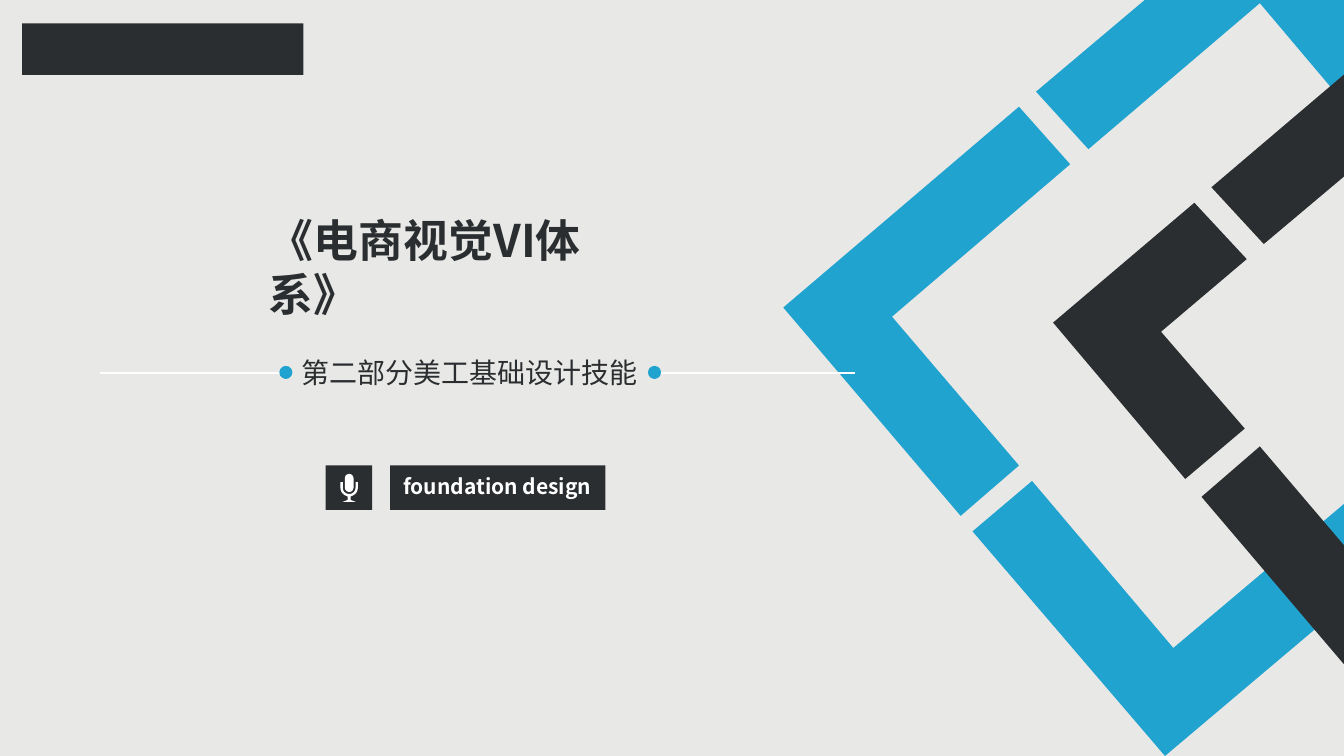
"""Build the cover slide of an e-commerce visual identity course."""
import math
from dataclasses import dataclass

import pptx
import pptx.dml.color
import pptx.enum.shapes
import pptx.enum.text
import pptx.oxml.ns
import pptx.shapes.autoshape
import pptx.slide
import pptx.util
from lxml import etree
from pptx.util import Cm

RGBColor = pptx.dml.color.RGBColor
MSO_SHAPE = pptx.enum.shapes.MSO_SHAPE
PP_ALIGN = pptx.enum.text.PP_ALIGN

PAPER = RGBColor(0xE8, 0xE8, 0xE6)
BLUE = RGBColor(0x21, 0xA3, 0xD0)
DARK = RGBColor(0x2B, 0x2E, 0x30)
WHITE = RGBColor(0xFF, 0xFF, 0xFF)
FONT = "Noto Sans CJK SC"
SLIDE_WIDTH, SLIDE_HEIGHT = 33.87, 19.05

Point = tuple[float, float]


@dataclass(frozen=True)
class Outline:
    contours: list[list[Point]]
    color: RGBColor


@dataclass(frozen=True)
class Block:
    left: float
    top: float
    width: float
    height: float
    color: RGBColor
    kind: MSO_SHAPE = MSO_SHAPE.RECTANGLE


@dataclass(frozen=True)
class Rule:
    start: float
    end: float


@dataclass(frozen=True)
class Caption:
    left: float
    top: float
    width: float
    height: float
    wording: str
    size: int
    color: RGBColor
    bold: bool = False
    align: PP_ALIGN = PP_ALIGN.LEFT


def stand_outline(x: float, y: float) -> list[Point]:
    """Return the microphone stand around the centre of its cradle."""
    outer, inner, arm, stem = 0.22, 0.16, 0.14, 0.04
    turns = [math.radians(angle) for angle in range(0, 181, 15)]
    cradle = [(x + inner * math.cos(t), y + inner * math.sin(t)) for t in turns]
    right = [(x + outer * math.cos(t), y + outer * math.sin(t)) for t in turns[:6]]
    foot = [(x + stem, y + outer), (x + stem, y + 0.31), (x + 0.17, y + 0.36)]
    half = [(x + inner, y - arm), (x + outer, y - arm), *right, *foot]
    mirrored = [(2 * x - px, py) for px, py in reversed(half)]
    return [*half, *mirrored, *reversed(cradle)]


FRAMES = [
    Outline([
        [(26.01, 12.12), (29.57, 16.33), (33.87, 12.7), (33.87, 15.24),
         (29.36, 19.05), (24.51, 13.39)],
        [(25.68, 2.69), (26.97, 4.14), (22.48, 7.98), (25.68, 11.73),
         (24.21, 13), (19.74, 7.75)],
        [(28.85, 0), (33.87, 0), (33.87, 2.59), (33.55, 2.21), (31.75, 0.08),
         (27.43, 3.76), (26.11, 2.31)],
    ], BLUE),
    Outline([
        [(31.75, 11.25), (33.87, 13.74), (33.87, 16.74), (30.28, 12.52)],
        [(30.1, 5.11), (31.42, 6.53), (29.26, 8.36), (31.37, 10.8),
         (29.87, 12.07), (26.54, 8.13)],
        [(33.87, 1.88), (33.87, 4.45), (31.85, 6.15), (30.53, 4.72)],
    ], DARK),
]
RULE_Y = 9.4
RULES = [Rule(7.11, 2.51), Rule(16.66, 21.54)]
BLOCKS = [
    Block(7.04, 9.22, 0.33, 0.33, BLUE, MSO_SHAPE.OVAL),
    Block(16.33, 9.22, 0.33, 0.33, BLUE, MSO_SHAPE.OVAL),
    Block(0.56, 0.59, 7.09, 1.3, DARK),
    Block(8.21, 11.73, 1.17, 1.12, DARK),
    Block(9.83, 11.73, 5.43, 1.12, DARK),
]
MICROPHONE_STAND = Outline([stand_outline(8.8, 12.29)], WHITE)
MICROPHONE_HEAD = Block(8.69, 11.94, 0.22, 0.46, WHITE, MSO_SHAPE.ROUNDED_RECTANGLE)
CAPTIONS = [
    Caption(9.91, 11.81, 5.97, 0.89, "foundation design", 15, WHITE, bold=True),
    Caption(7.34, 8.84, 8.99, 1.12, "第二部分美工基础设计技能", 20, DARK,
            align=PP_ALIGN.CENTER),
    Caption(6.53, 5.23, 10.59, 1.63, "《电商视觉VI体系》", 32, DARK, bold=True),
]


def paint(shape: pptx.shapes.autoshape.Shape, color: RGBColor) -> None:
    """Give a shape a plain fill without line or shadow."""
    shape.shadow.inherit = False
    shape.fill.solid()
    shape.fill.fore_color.rgb = color
    shape.line.fill.background()


def draw_outline(slide: pptx.slide.Slide, outline: Outline) -> None:
    """Draw all contours of an outline as one freeform."""
    first, *others = [[(Cm(x), Cm(y)) for x, y in contour]
                      for contour in outline.contours]
    builder = slide.shapes.build_freeform(*first[0])
    builder.add_line_segments(first[1:])
    for contour in others:
        builder.move_to(*contour[0])
        builder.add_line_segments(contour[1:])
    paint(builder.convert_to_shape(), outline.color)


def draw_block(slide: pptx.slide.Slide, block: Block) -> None:
    """Draw a preset shape."""
    shape = slide.shapes.add_shape(block.kind, Cm(block.left), Cm(block.top),
                                   Cm(block.width), Cm(block.height))
    if block.kind == MSO_SHAPE.ROUNDED_RECTANGLE:
        shape.adjustments[0] = 0.5
    paint(shape, block.color)


def draw_rule(slide: pptx.slide.Slide, rule: Rule) -> None:
    """Draw a white horizontal line beside the subtitle."""
    line = slide.shapes.add_connector(
        pptx.enum.shapes.MSO_CONNECTOR.STRAIGHT,
        Cm(rule.start), Cm(RULE_Y), Cm(rule.end), Cm(RULE_Y))
    line.line.color.rgb = WHITE
    line.line.width = pptx.util.Pt(1.5)
    etree.SubElement(line._element.spPr, pptx.oxml.ns.qn("a:effectLst"))


def draw_caption(slide: pptx.slide.Slide, caption: Caption) -> None:
    """Draw a wrapped line of text."""
    frame = slide.shapes.add_textbox(Cm(caption.left), Cm(caption.top),
                                     Cm(caption.width), Cm(caption.height)).text_frame
    frame.word_wrap = True
    frame.auto_size = pptx.enum.text.MSO_AUTO_SIZE.SHAPE_TO_FIT_TEXT
    paragraph = frame.paragraphs[0]
    paragraph.alignment = caption.align
    run = paragraph.add_run()
    run.text = caption.wording
    run.font.size = pptx.util.Pt(caption.size)
    run.font.bold = caption.bold
    run.font.name = FONT
    run.font.color.rgb = caption.color
    east_asian = etree.SubElement(run.font._element, pptx.oxml.ns.qn("a:ea"))
    east_asian.set("typeface", FONT)


def main() -> None:
    """Assemble and save the cover."""
    deck = pptx.Presentation()
    deck.slide_width, deck.slide_height = Cm(SLIDE_WIDTH), Cm(SLIDE_HEIGHT)
    cover = deck.slides.add_slide(deck.slide_layouts[6])
    cover.background.fill.solid()
    cover.background.fill.fore_color.rgb = PAPER
    for frame in FRAMES:
        draw_outline(cover, frame)
    for rule in RULES:
        draw_rule(cover, rule)
    for block in BLOCKS:
        draw_block(cover, block)
    draw_outline(cover, MICROPHONE_STAND)
    draw_block(cover, MICROPHONE_HEAD)
    for caption in CAPTIONS:
        draw_caption(cover, caption)
    deck.save("out.pptx")


if __name__ == "__main__":
    main()
